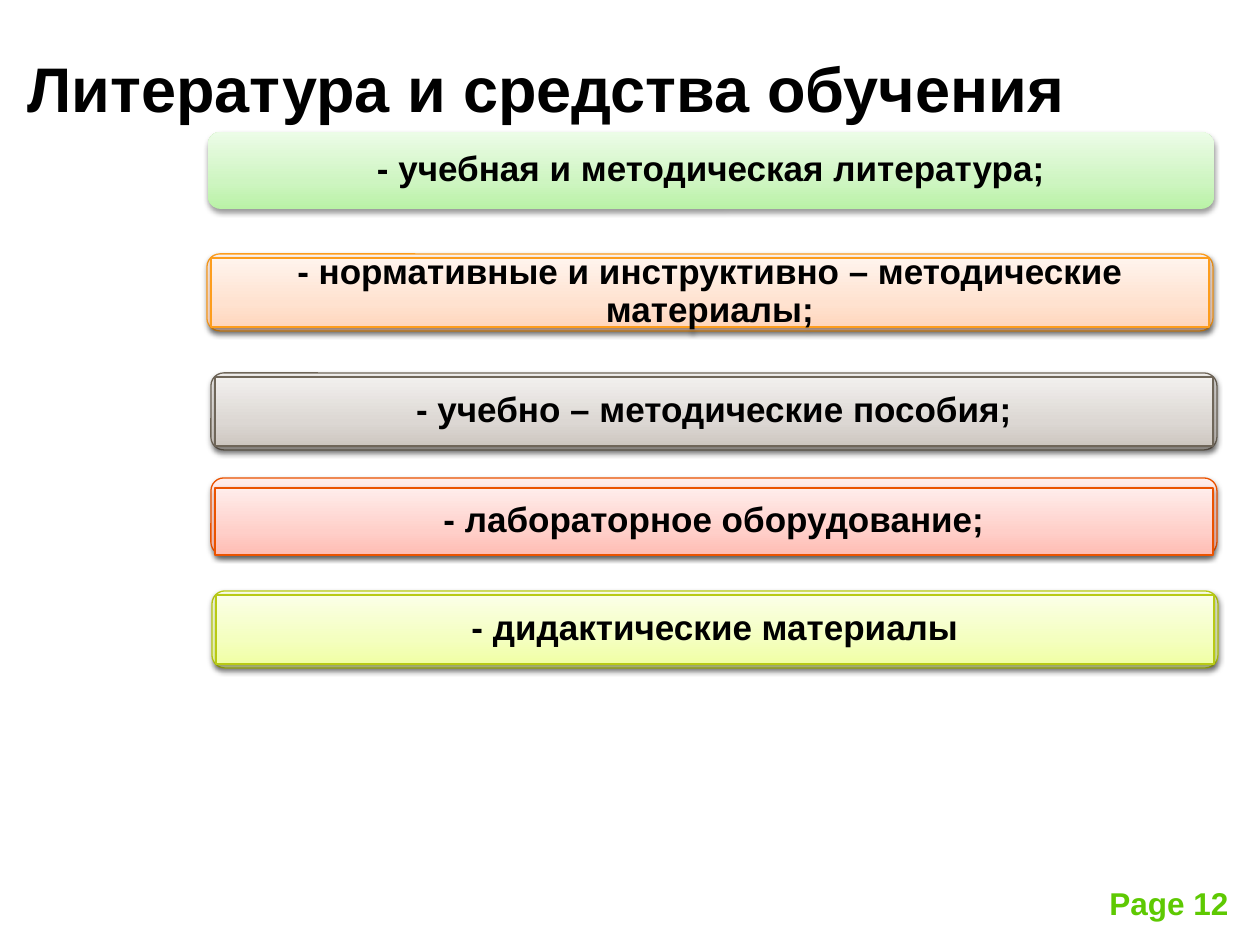
from lxml import etree
from pptx import Presentation
from pptx.dml.color import RGBColor
from pptx.enum import shapes, text
from pptx.oxml.ns import qn
from pptx.util import Pt

PX = 914400 / 126
BLACK = RGBColor(0, 0, 0)
GREEN = RGBColor(0x5E, 0xC9, 0x02)
ORANGE = RGBColor(0xFD, 0x9D, 0x1D)
BROWN = RGBColor(0x6F, 0x66, 0x59)
RED = RGBColor(0xEB, 0x53, 0x00)
LIME = RGBColor(0xB8, 0xCA, 0x15)


def shades(*codes):
    return [RGBColor.from_string(code) for code in codes]


MINT = shades("B9F2A6", "CEF5C1", "ECFCE7")
PEACH = shades("FFD6BD", "FFE2D0", "FFF4ED")
STONE = shades("CDC7C0", "DCD7D3", "F2F0EE")
ROSE = shades("FFBCB3", "FFCFC9", "FFEDEB")
LEMON = shades("F0FFA5", "F4FFBF", "FBFFE7")
STOPS = (0, 35, 100)

TITLE = "Литература и средства обучения"
PAGE = "Page 12"
# wording, left, top, panel top inset, shades, outline
CARDS = [
    ("- учебная и методическая литература;", 208, 132, 4, MINT, None),
    ("- нормативные и инструктивно – методические материалы;",
     207, 254, 4, PEACH, ORANGE),
    ("- учебно – методические пособия;", 211, 373, 4, STONE, BROWN),
    ("- лабораторное оборудование;", 211, 478, 10, ROSE, RED),
    ("- дидактические материалы", 212, 591, 4, LEMON, LIME),
]
CARD_W, CARD_H, EDGE = 1006, 77, 4


def emu(*lengths):
    return [round(n * PX) for n in lengths]


def write(shape, words, size, color, align, **frame):
    """Fill a shape with one bold paragraph; frame holds text frame values."""
    tf = shape.text_frame
    for key, value in frame.items():
        setattr(tf, key, value)
    para = tf.paragraphs[0]
    para.alignment = align
    run = para.add_run()
    run.text = words
    for key, value in dict(name="Arial", size=Pt(size), bold=True).items():
        setattr(run.font, key, value)
    run.font.color.rgb = color
    return para


def paint(shape, tones, outline):
    """Give a shape its upward gradient, outline and soft shadow."""
    shape.fill.gradient()
    shape.fill.gradient_angle = 90
    props = shape._element.spPr
    stops = props.find(".//" + qn("a:gsLst"))
    for old in list(stops):
        stops.remove(old)
    for pos, tone in zip(STOPS, tones):
        stop = etree.SubElement(stops, qn("a:gs"), pos=str(pos * 1000))
        etree.SubElement(stop, qn("a:srgbClr"), val=str(tone))
    if outline:
        shape.line.color.rgb = outline
        shape.line.width = Pt(0.75)
    else:
        shape.line.fill.background()
    shape.shadow.inherit = False
    shadow = etree.SubElement(
        props.find(qn("a:effectLst")), qn("a:outerShdw"),
        blurRad=str(Pt(3.1)), dist=str(Pt(1.6)), dir="5400000", rotWithShape="0")
    black = etree.SubElement(shadow, qn("a:srgbClr"), val=str(BLACK))
    etree.SubElement(black, qn("a:alpha"), val="38000")


def add_card(slide, words, left, top, inset, tones, outline):
    group = slide.shapes.add_group_shape().shapes
    kinds = shapes.MSO_SHAPE
    card = group.add_shape(kinds.ROUNDED_RECTANGLE, *emu(left, top, CARD_W, CARD_H))
    paint(card, tones, outline)
    high = 67 if inset > EDGE else CARD_H - 2 * EDGE
    box = emu(left + EDGE, top + inset, CARD_W - 2 * EDGE, high)
    if outline:
        panel = group.add_shape(kinds.RECTANGLE, *box)
        paint(panel, tones, outline)
    else:
        panel = group.add_textbox(*box)
    side = emu(32)[0]
    para = write(panel, words, 20, BLACK, text.PP_ALIGN.CENTER, word_wrap=True,
                 vertical_anchor=text.MSO_ANCHOR.MIDDLE, margin_left=side,
                 margin_right=side, margin_top=0, margin_bottom=0)
    para.line_spacing = 0.9


def main():
    deck = Presentation()
    deck.slide_width, deck.slide_height = emu(1260, 945)
    slide = deck.slides.add_slide(deck.slide_layouts[5])
    left = text.PP_ALIGN.LEFT

    title = slide.shapes.title
    title.left, title.top, title.width, title.height = emu(15, 37, 1071, 203)
    write(title, TITLE, 36, BLACK, left, word_wrap=True,
          auto_size=text.MSO_AUTO_SIZE.NONE,
          vertical_anchor=text.MSO_ANCHOR.TOP, margin_top=emu(12)[0])

    page = slide.shapes.add_textbox(*emu(1097, 878, 147, 50))
    write(page, PAGE, 18, GREEN, left, word_wrap=False,
          auto_size=text.MSO_AUTO_SIZE.SHAPE_TO_FIT_TEXT)

    for card in CARDS:
        add_card(slide, *card)
    deck.save("out.pptx")


if __name__ == "__main__":
    main()
